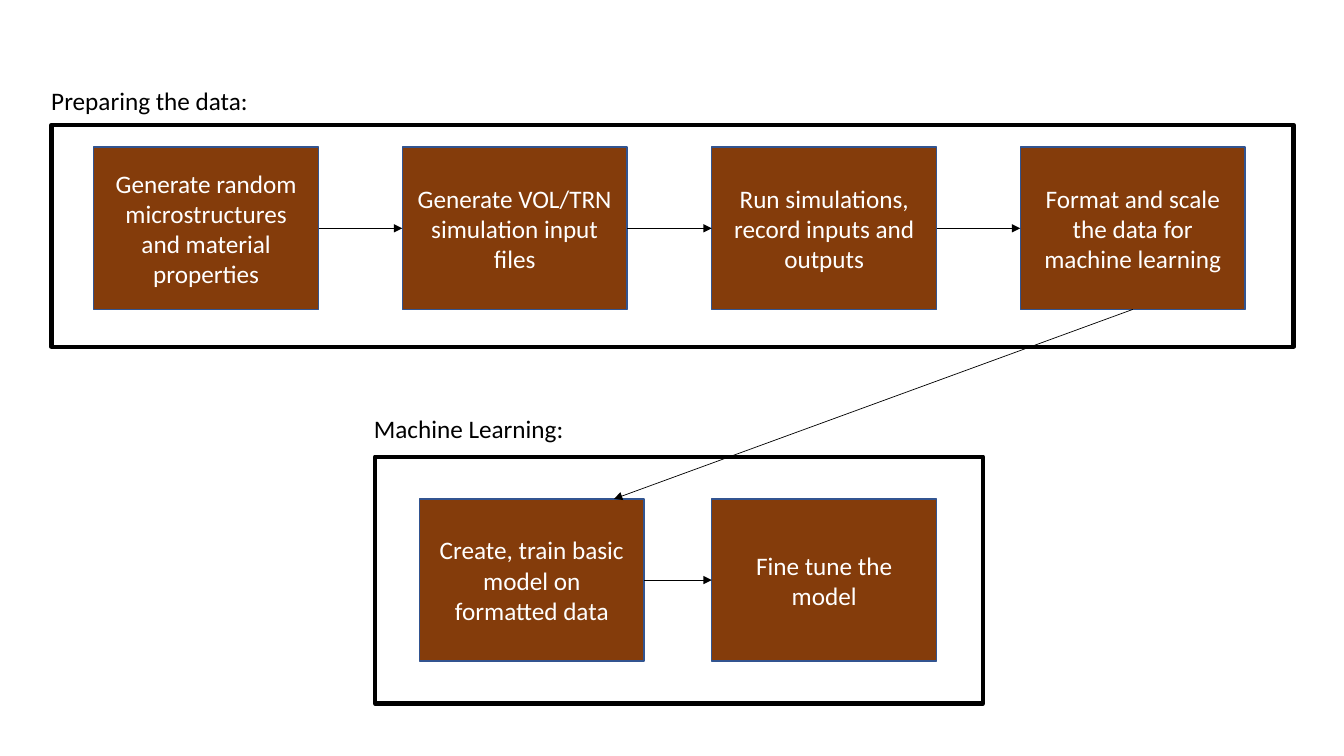
from lxml.etree import SubElement
from pptx import Presentation
from pptx.dml.color import RGBColor
from pptx.enum.shapes import MSO_CONNECTOR, MSO_SHAPE
from pptx.enum.text import MSO_ANCHOR, PP_ALIGN
from pptx.oxml.ns import qn
from pptx.util import Pt

PX = 9144  # 100 px to the inch
THEME = {
    "font": "Calibri",
    "size": Pt(18),
    "ink": RGBColor.from_string("000000"),
    "step_text": RGBColor.from_string("FFFFFF"),
    "step_fill": RGBColor.from_string("843C0B"),
    "step_line": RGBColor.from_string("325490"),
}
STEP_WIDTH, STEP_HEIGHT = 223, 161

# Each stage: label and its box, frame box, first step, pitch as a fraction, steps
STAGES = [
    {
        "label": "Preparing the data:", "label_box": (41, 80, 232, 40),
        "frame": (51, 124, 1232, 220), "left": 93, "top": 146, "pitch": 919 / 3,
        "steps": [
            "Generate random microstructures and material properties",
            "Generate VOL/TRN simulation input files",
            "Run simulations, record inputs and outputs",
            "Format and scale the data for machine learning",
        ],
    },
    {
        "label": "Machine Learning:", "label_box": (361, 405, 225, 40),
        "frame": (372, 453, 603, 245), "left": 416, "top": 495, "pitch": 290,
        "steps": [
            "Create, train basic model on formatted data",
            "Fine tune the model",
        ],
    },
]


def write_text(shape, text, color, format_values):
    frame = shape.text_frame
    frame.word_wrap = True
    paragraph = frame.paragraphs[0]
    for name, value in format_values.items():
        setattr(frame if name == "vertical_anchor" else paragraph, name, value)
    run = paragraph.add_run()
    run.text = text
    for name, value in {"name": THEME["font"], "size": THEME["size"]}.items():
        setattr(run.font, name, value)
    run.font.color.rgb = color


def add_arrow(begin, end):
    arrow = slide.shapes.add_connector(MSO_CONNECTOR.STRAIGHT, *begin, *end)
    arrow.line.color.rgb = THEME["ink"]
    arrow.line.width = Pt(0.5)
    SubElement(arrow.line._get_or_add_ln(), qn("a:tailEnd"), type="triangle")
    SubElement(arrow._element.spPr, qn("a:effectLst"))
    return arrow


presentation = Presentation()
presentation.slide_width, presentation.slide_height = 1333 * PX, 750 * PX
slide = presentation.slides.add_slide(presentation.slide_layouts[6])

stage_steps = []
for stage in STAGES:
    # Step boxes, each joined to the one before it
    steps = []
    for index, text in enumerate(stage["steps"]):
        left = round(stage["left"] + index * stage["pitch"])
        step = slide.shapes.add_shape(
            MSO_SHAPE.RECTANGLE, left * PX, stage["top"] * PX,
            STEP_WIDTH * PX, STEP_HEIGHT * PX)
        step.shadow.inherit = False
        step.fill.solid()
        step.fill.fore_color.rgb = THEME["step_fill"]
        step.line.color.rgb = THEME["step_line"]
        step.line.width = Pt(1)
        write_text(step, text, THEME["step_text"], {
            "vertical_anchor": MSO_ANCHOR.MIDDLE, "alignment": PP_ALIGN.CENTER})
        if steps:
            arrow = add_arrow((0, 0), (0, 0))
            arrow.begin_connect(steps[-1], 3)
            arrow.end_connect(step, 1)
        steps.append(step)
    stage_steps.append(steps)

    # Stage label
    label = slide.shapes.add_textbox(*[value * PX for value in stage["label_box"]])
    write_text(label, stage["label"], THEME["ink"], {"alignment": PP_ALIGN.LEFT})

    # Stage frame
    frame = slide.shapes.add_shape(
        MSO_SHAPE.RECTANGLE, *[value * PX for value in stage["frame"]])
    frame.shadow.inherit = False
    frame.fill.background()
    frame.line.color.rgb = THEME["ink"]
    frame.line.width = Pt(3)

# Arrow from the last data step down to the first learning step
handover = add_arrow((0, 0), (609 * PX, 495 * PX))
handover.begin_connect(stage_steps[0][-1], 2)

presentation.save("out.pptx")
